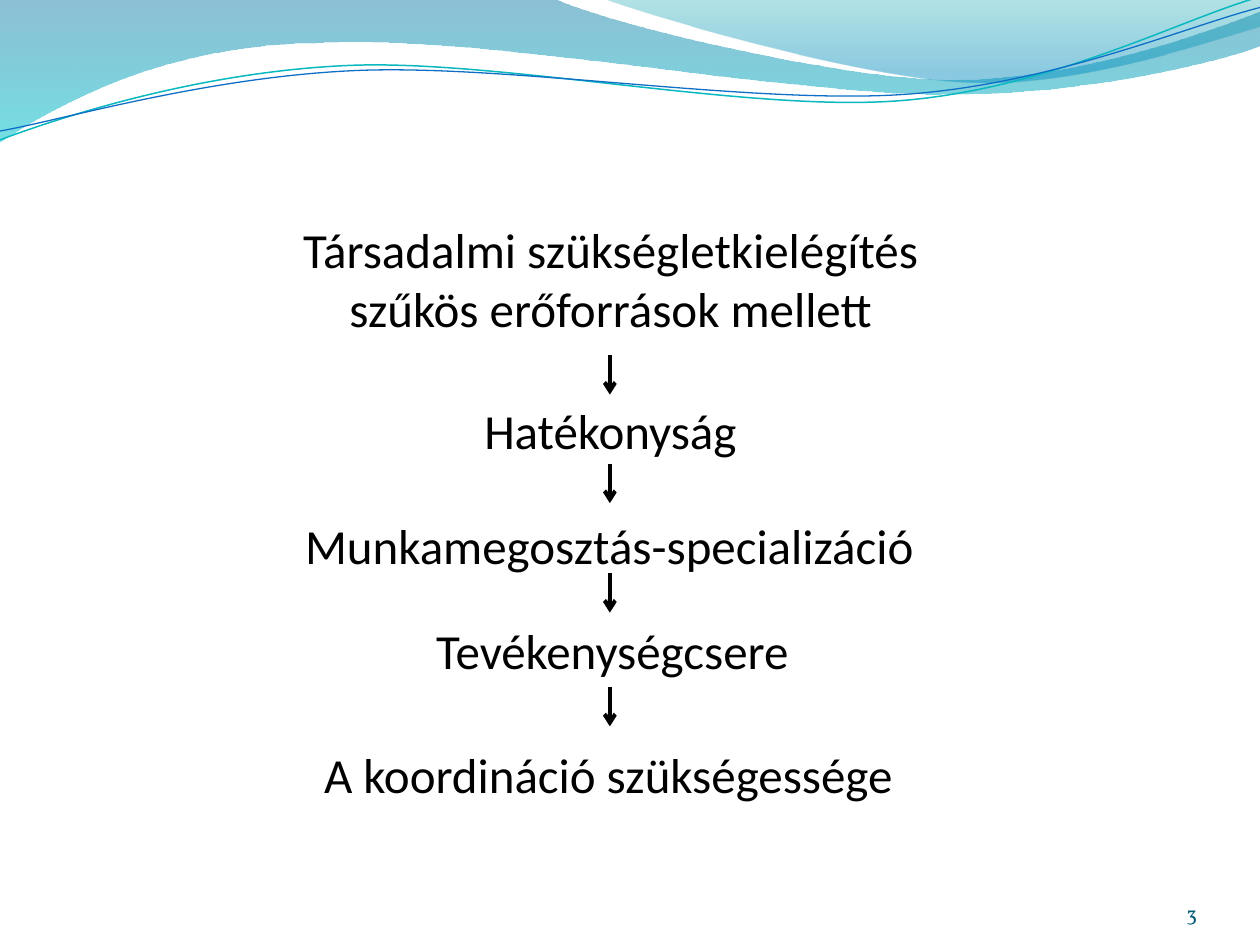
"""Builds a slide with a wave banner and a chain of economic concepts."""
from dataclasses import dataclass
from math import cos, radians, sin

from lxml.etree import SubElement
from pptx import Presentation
from pptx.dml.color import RGBColor
from pptx.enum.shapes import MSO_CONNECTOR
from pptx.enum.text import MSO_ANCHOR, MSO_AUTO_SIZE, PP_ALIGN
from pptx.oxml.ns import qn
from pptx.shapes.autoshape import Shape
from pptx.shapes.shapetree import GroupShapes, SlideShapes
from pptx.slide import Slide
from pptx.util import Pt

COLOURS = {
    "text": "000000", "number": "045D75",
    "deep_blue": "0074A1", "cyan": "00C6CF", "teal": "00A1A9", "sky": "008BBF",
    "teal_line": "0AB8BF", "blue_line": "0F6FC6",
}
STRAND_TILT = 2.7
ARROW_X = 348.5
ARROW_LENGTH = 22.5
ARROW_TOPS = (203, 265, 327.6, 392.6)

Point = tuple[float, float]
Segment = tuple[Point, ...]


@dataclass(frozen=True)
class Stop:
    position: float
    colour: str
    opacity: int


@dataclass(frozen=True)
class Wave:
    start: Point
    segments: tuple[Segment, ...]
    stops: tuple[Stop, Stop]


@dataclass(frozen=True)
class Strand:
    pivot: Point
    start: Point
    segments: tuple[Segment, ...]
    colour: str
    width: float


@dataclass(frozen=True)
class Concept:
    lines: tuple[str, ...]
    left: float
    top: float
    width: float
    height: float = 41.2


WAVES = (
    Wave((0, -0.7), (
        ((316.8, -0.7),),
        ((342.7, 12.2), (478.1, 45.4), (545.8, 45.4)),
        ((614.2, 45.4), (689.8, 18.7), (720, 6.5)),
        ((720.7, 25.9),),
        ((707.8, 31.7), (626.4, 54.7), (537.1, 54)),
        ((447.8, 54), (275, 20.2), (185, 24.5)),
        ((92.9, 25.2), (33.1, 59.8), (-0.7, 81.4)),
        ((0, -0.7),),
    ), (Stop(0, "deep_blue", 45), Stop(1, "cyan", 55))),
    Wave((344.9, -0.7), (
        ((366.5, 7.9), (491, 44.6), (553.7, 46.8)),
        ((616.3, 49.7), (691.9, 23), (720, 15.1)),
        ((720, 0),),
        ((344.9, -0.7),),
    ), (Stop(0, "teal", 30), Stop(0.8, "sky", 45))),
)
STRANDS = (
    Strand((359.3, 41.4), (0, 79.9), (
        ((34.6, 67), (113.8, 41), (199.4, 37.4)),
        ((284.4, 33.8), (427, 64.1), (513.4, 57.6)),
        ((599.8, 51.1), (675.4, 10.8), (718.6, -1.4)),
    ), "teal_line", 0.85),
    Strand((359.6, 42.5), (0, 74.9), (
        ((33.8, 69.1), (118.1, 43.9), (203.8, 40.3)),
        ((290.2, 36.7), (429.8, 59.8), (516.2, 54)),
        ((601.9, 48.2), (677.5, 15.1), (720, 4.3)),
    ), "blue_line", 0.75),
)
CONCEPTS = (
    Concept(("Társadalmi szükségletkielégítés", "szűkös erőforrások mellett"),
            141.5, 121.9, 414.7, 75),
    Concept(("Hatékonyság",), 262, 225.4, 173.5),
    Concept(("Munkamegosztás-specializáció",), 149.4, 290.9, 397.4),
    Concept(("Tevékenységcsere",), 230.4, 351, 239),
    Concept(("A koordináció szükségessége",), 161.5, 421.9, 372.2),
)


def colour(name: str) -> RGBColor:
    """Look up a named colour."""
    return RGBColor.from_string(COLOURS[name])


def turn(point: Point, pivot: Point, degrees: float) -> Point:
    """Turn a point clockwise about a pivot."""
    angle = radians(degrees)
    x, y = point[0] - pivot[0], point[1] - pivot[1]
    return (pivot[0] + x * cos(angle) - y * sin(angle),
            pivot[1] + x * sin(angle) + y * cos(angle))


def draw_outline(shapes: SlideShapes | GroupShapes, start: Point,
                 segments: tuple[Segment, ...], close: bool) -> Shape:
    """Draw an outline of straight and cubic segments."""
    points = [(Pt(x), Pt(y)) for x, y in (start, *(p for s in segments for p in s))]
    builder = shapes.build_freeform(*points[0], scale=1.0)
    builder.add_line_segments(points[1:], close=close)
    shape = builder.convert_to_shape()
    shape.shadow.inherit = False
    outline = next(shape.element.spPr.iter(qn("a:path")))
    steps = iter(outline.findall(qn("a:lnTo")))
    for segment in segments:
        parts = [next(steps) for _ in segment]
        if len(parts) == 3:
            curve = SubElement(outline, qn("a:cubicBezTo"))
            outline.replace(parts[0], curve)
            for part in parts:
                curve.append(part[0])
            for part in parts[1:]:
                outline.remove(part)
    return shape


def draw_wave(page: Slide, wave: Wave) -> None:
    """Draw a translucent gradient wave."""
    shape = draw_outline(page.shapes, wave.start, wave.segments, True)
    shape.line.fill.background()
    shape.fill.gradient()
    shape.fill.gradient_angle = 270
    for target, stop in zip(shape.fill.gradient_stops, wave.stops):
        target.position = stop.position
        target.color.rgb = colour(stop.colour)
    fills = shape.element.spPr.iter(qn("a:srgbClr"))
    for fill, stop in zip(list(fills), wave.stops):
        SubElement(fill, qn("a:alpha"), val=str(stop.opacity * 1000))


def draw_strand(shapes: GroupShapes, strand: Strand) -> None:
    """Draw a thin, tilted curved line."""
    start = turn(strand.start, strand.pivot, STRAND_TILT)
    segments = tuple(tuple(turn(point, strand.pivot, STRAND_TILT) for point in segment)
                     for segment in strand.segments)
    shape = draw_outline(shapes, start, segments, False)
    shape.rotation = 360 - STRAND_TILT
    shape.fill.background()
    shape.line.color.rgb = colour(strand.colour)
    shape.line.width = Pt(strand.width)


def draw_concept(page: Slide, concept: Concept) -> None:
    """Write one centred concept."""
    box = page.shapes.add_textbox(
        Pt(concept.left), Pt(concept.top), Pt(concept.width), Pt(concept.height))
    frame = box.text_frame
    frame.word_wrap = False
    frame.auto_size = MSO_AUTO_SIZE.SHAPE_TO_FIT_TEXT
    frame.text = "\n".join(concept.lines)
    for para in frame.paragraphs:
        para.alignment = PP_ALIGN.CENTER
        para.font.name, para.font.size = "Calibri", Pt(28)
        para.font.color.rgb = colour("text")


def draw_arrow(page: Slide, top: float) -> None:
    """Draw a downward arrow between two concepts."""
    arrow = page.shapes.add_connector(
        MSO_CONNECTOR.STRAIGHT, Pt(ARROW_X), Pt(top), Pt(ARROW_X), Pt(top + ARROW_LENGTH))
    arrow.line.color.rgb = colour("text")
    arrow.line.width = Pt(2.25)
    SubElement(arrow.element.spPr.find(qn("a:ln")), qn("a:tailEnd"), type="arrow")
    SubElement(arrow.element.spPr, qn("a:effectLst"))


def draw_number(page: Slide, number: str) -> None:
    """Write the page number at the bottom right."""
    frame = page.shapes.add_textbox(Pt(624), Pt(500.4), Pt(60), Pt(28.8)).text_frame
    frame.word_wrap = True
    frame.vertical_anchor = MSO_ANCHOR.BOTTOM
    frame.margin_left = frame.margin_right = frame.margin_top = frame.margin_bottom = Pt(0)
    para = frame.paragraphs[0]
    para.text = number
    para.alignment = PP_ALIGN.RIGHT
    para.font.name, para.font.size = "Vollkorn", Pt(12)
    para.font.color.rgb = colour("number")


deck = Presentation()
deck.slide_width, deck.slide_height = Pt(720), Pt(540)
page = deck.slides.add_slide(deck.slide_layouts[6])
for wave in WAVES:
    draw_wave(page, wave)
strands = page.shapes.add_group_shape()
for strand in STRANDS:
    draw_strand(strands.shapes, strand)
for concept in CONCEPTS:
    draw_concept(page, concept)
for top in ARROW_TOPS:
    draw_arrow(page, top)
draw_number(page, "3")
deck.save("out.pptx")
